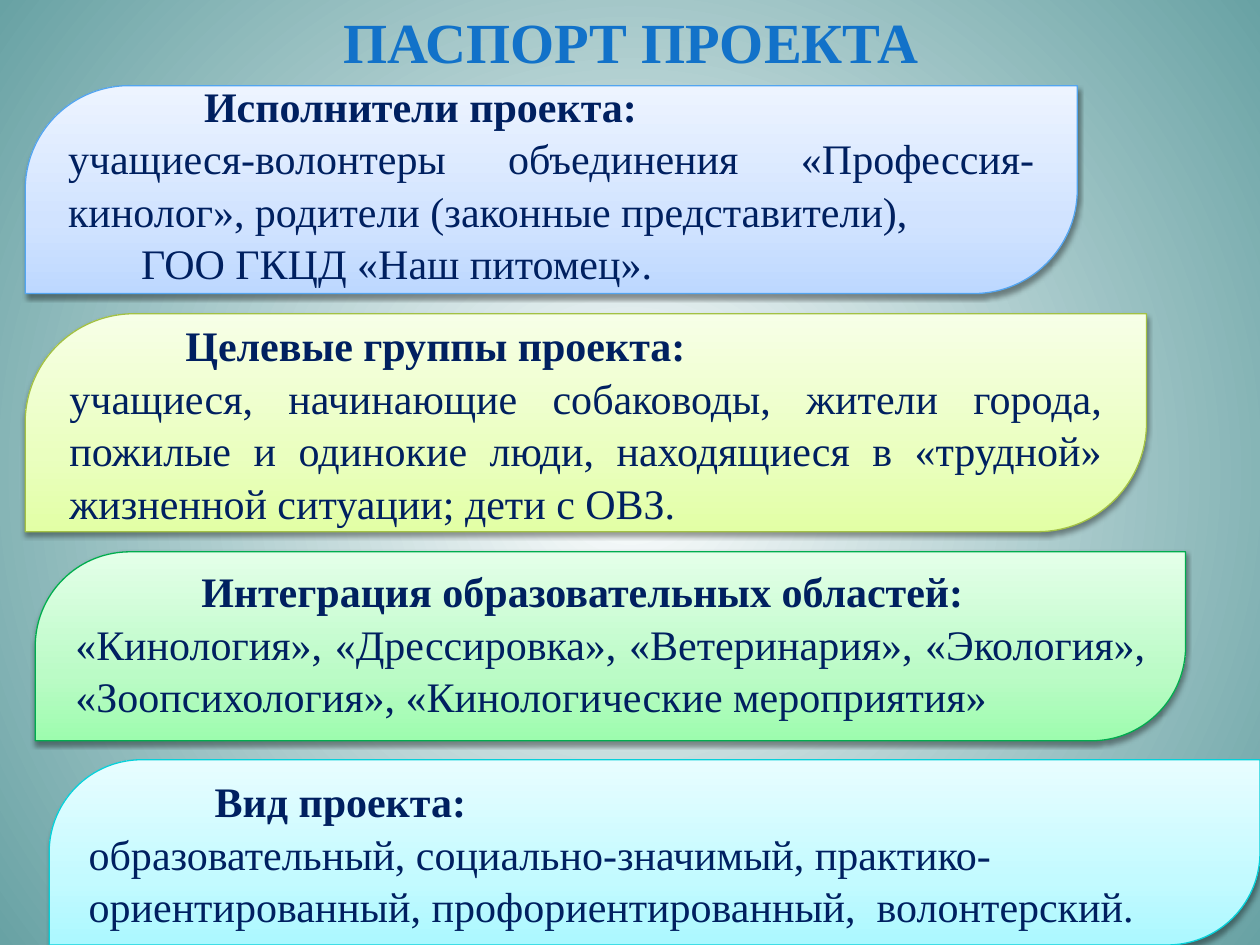
from dataclasses import dataclass

from lxml import etree
from pptx import Presentation
from pptx.dml.color import RGBColor
from pptx.enum import shapes, text
from pptx.oxml import ns
from pptx.util import Inches, Pt


@dataclass(frozen=True)
class Theme:
    """Hold the colours, font and type sizes of the slide."""
    font: str = "Times New Roman"
    title: str = "1272C9"
    ink: str = "002060"
    shade: str = "000000"
    mid: str = "FFFFFF"
    edge: str = "68A2A4"
    head: float = 32.4
    body: float = 24
    blue: tuple = ("53A5F0", "BDD8FF", "D1E3FF", "EDF4FF")
    lime: tuple = ("A3C144", "E2FFA5", "EAFFBF", "F7FFE7")
    green: tuple = ("00AC4E", "9DFCAE", "BBFBC6", "E4FFE9")
    aqua: tuple = ("06D0D9", "ABF8FF", "C3FAFF", "E8FDFF")


THEME = Theme()
ALIGN = text.PP_ALIGN


def add(parent, tag, **attrs):
    """Append a drawing element with the given attributes."""
    node = etree.SubElement(parent, ns.qn(tag))
    for key, value in attrs.items():
        node.set(key, str(value))
    return node


def blend(owner, fill, stops, round=False):
    """Give a fill an upward linear or a centred round gradient."""
    fill.gradient()
    grad = next(owner.iter(ns.qn("a:gradFill")))
    for child in list(grad):
        grad.remove(child)
    group = add(grad, "a:gsLst")
    for place, color in stops:
        add(add(group, "a:gs", pos=place * 1000), "a:srgbClr", val=color)
    if round:
        way = add(grad, "a:path")
        way.set("path", "circle")
        add(way, "a:fillToRect", l=50000, t=50000, r=50000, b=50000)
    else:
        add(grad, "a:lin", ang=270 * 60000, scaled=0)


def write(para, words, size=THEME.body, color=THEME.ink, bold=False,
          align=ALIGN.LEFT, indent=0, space=1.0):
    """Fill a paragraph with formatted text."""
    para.alignment = align
    para.line_spacing = space
    para.space_before = para.space_after = Pt(0)
    props = para._p.get_or_add_pPr()
    props.set("marL", "0")
    props.set("indent", str(Inches(indent)))
    run = para.add_run()
    run.text = words
    font = run.font
    font.name, font.size, font.bold = THEME.font, Pt(size), bold
    font.color.rgb = RGBColor.from_string(color)


def title(slide, box, words):
    """Place and format the slide title."""
    shape = slide.shapes.title
    shape.left, shape.top, shape.width, shape.height = map(Inches, box)
    frame = shape.text_frame
    frame.word_wrap = True
    frame.vertical_anchor = text.MSO_ANCHOR.MIDDLE
    write(frame.paragraphs[0], words, size=THEME.head, color=THEME.title,
          bold=True, align=ALIGN.CENTER)


def panel(slide, box, colors, head, indent, lines, lift=0):
    """Draw a leaf-shaped panel with a bold heading and body lines."""
    shape = slide.shapes.add_shape(
        shapes.MSO_SHAPE.ROUND_2_DIAG_RECTANGLE, *map(Inches, box))
    shape.adjustments[0], shape.adjustments[1] = 0.5, 0
    edge, *tones = colors
    blend(shape._element, shape.fill, zip((0, 35, 100), tones))
    shape.line.color.rgb = RGBColor.from_string(edge)
    shape.line.width = Pt(0.75)
    shape.shadow.inherit = False
    effect = shape._element.spPr.find(ns.qn("a:effectLst"))
    cast = add(effect, "a:outerShdw", blurRad=Pt(3.1), dist=Pt(1.6),
               dir=90 * 60000, rotWithShape=0)
    add(add(cast, "a:srgbClr", val=THEME.shade), "a:alpha", val=38000)

    frame = shape.text_frame
    frame.word_wrap = True
    frame.vertical_anchor = text.MSO_ANCHOR.MIDDLE
    frame.margin_bottom = Inches(0.05 + lift)
    write(frame.paragraphs[0], head, bold=True, indent=indent, space=1.04)
    for words, align, inset in lines:
        write(frame.add_paragraph(), words, align=align, indent=inset,
              space=1.04)


def main():
    """Build and save the project passport slide."""
    deck = Presentation()
    deck.slide_width, deck.slide_height = Inches(10), Inches(7.5)
    slide = deck.slides.add_slide(deck.slide_layouts[5])
    blend(slide._element, slide.background.fill,
          ((0, THEME.mid), (100, THEME.edge)), round=True)
    title(slide, (0.51, 0, 9, 0.65), "ПАСПОРТ ПРОЕКТА")
    panel(slide, (0.2, 0.68, 8.35, 1.65), THEME.blue,
          "Исполнители проекта:", 1.08, (
              ("учащиеся-волонтеры объединения «Профессия-кинолог», "
               "родители (законные представители),", ALIGN.JUSTIFY, 0),
              ("ГОО ГКЦД «Наш питомец».", ALIGN.LEFT, 0.58)), lift=0.1)
    panel(slide, (0.2, 2.49, 8.9, 1.73), THEME.lime,
          "Целевые группы проекта:", 0.92, (
              ("учащиеся, начинающие собаководы, жители города, пожилые "
               "и одинокие люди, находящиеся в «трудной» жизненной "
               "ситуации; дети с ОВЗ.", ALIGN.JUSTIFY, 0),))
    panel(slide, (0.28, 4.38, 9.13, 1.5), THEME.green,
          "Интеграция образовательных областей:", 1, (
              ("«Кинология», «Дрессировка», «Ветеринария», «Экология», "
               "«Зоопсихология», «Кинологические мероприятия»",
               ALIGN.JUSTIFY, 0),), lift=0.06)
    panel(slide, (0.39, 6.03, 9.61, 1.47), THEME.aqua,
          "Вид проекта:", 1, (
              ("образовательный, социально-значимый, "
               "практико-ориентированный, профориентированный,  "
               "волонтерский.", ALIGN.LEFT, 0),))
    deck.save("out.pptx")


if __name__ == "__main__":
    main()
